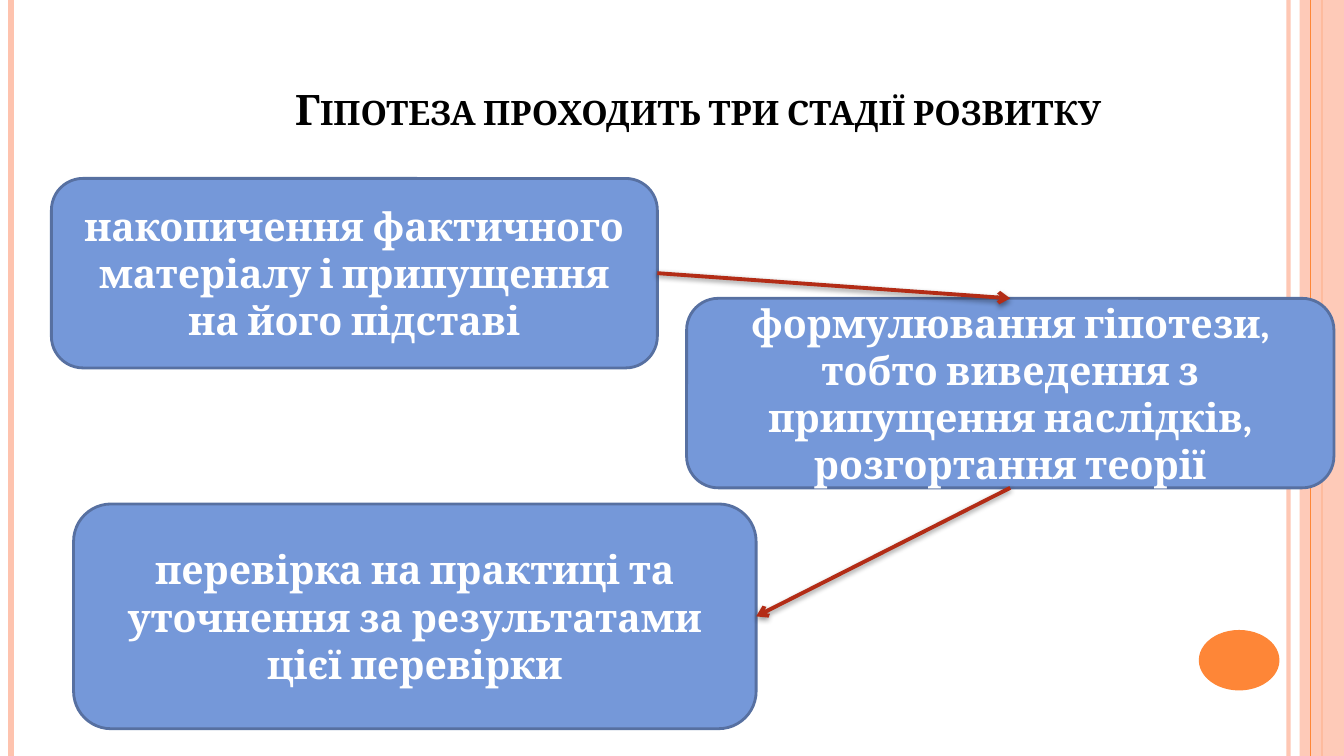
from lxml.etree import SubElement
from pptx import Presentation
from pptx.dml.color import RGBColor
from pptx.enum.shapes import MSO_CONNECTOR as Connector, MSO_SHAPE as Preset
from pptx.enum.text import MSO_ANCHOR as Anchor, MSO_AUTO_SIZE as AutoSize, PP_ALIGN as Align
from pptx.oxml.ns import qn
from pptx.util import Inches, Pt

WIDTH, HEIGHT = 13.33, 7.5
FONT = "Cambria"
PEACH, ORANGE, RED = "FEC3AE", "FE8637", "B32C16"
CARD_FILL, CARD_LINE = "7598D9", "5770A1"
TOP, BOTTOM, RIGHT = 0, 2, 3

TITLE = ("Гіпотеза проходить три стадії розвитку", (0.64, 0.32, 12.57, 1.06))
STAGES = [
    ("накопичення фактичного матеріалу і припущення на його підставі", (0.51, 1.77, 6.01, 1.88)),
    ("формулювання гіпотези, тобто виведення з припущення наслідків, розгортання теорії",
     (6.81, 2.96, 6.42, 1.88)),
    ("перевірка на практиці та уточнення за результатами цієї перевірки", (0.73, 5, 6.77, 2.23)),
]
ARROWS = [(0, RIGHT, 1, TOP), (1, BOTTOM, 2, RIGHT)]
BACK_STRIPES = [(12.78, PEACH, 3, 93), (0.11, PEACH, 4.5, 100), (13.11, ORANGE, 1.5, 100)]
FRONT_STRIPES = [(13, ORANGE, 0.75, 100)]
BAND = (12.89, 0, WIDTH - 12.89, HEIGHT)
DOT = (11.89, 6.25, 0.8, 0.6)


def color(value):
    return RGBColor.from_string(value)


def set_alpha(element, percent):
    if percent < 100:
        target = next(element.iter(qn("a:srgbClr")))
        SubElement(target, qn("a:alpha"), val=str(percent * 1000))


def add_shape(preset, box, fill, alpha=100):
    shape = slide.shapes.add_shape(preset, *map(Inches, box))
    shape.shadow.inherit = False
    shape.fill.solid()
    shape.fill.fore_color.rgb = color(fill)
    set_alpha(shape._element.spPr, alpha)
    shape.line.fill.background()
    return shape


def add_line(start, end, line_color, width, alpha=100):
    line = slide.shapes.add_connector(Connector.STRAIGHT, *map(Inches, start + end))
    line.line.color.rgb = color(line_color)
    line.line.width = Pt(width)
    set_alpha(line._element.spPr, alpha)
    SubElement(line._element.spPr, qn("a:effectLst"))
    return line


def add_stripes(stripes):
    for x, line_color, width, alpha in stripes:
        add_line((x, 0), (x, HEIGHT), line_color, width, alpha)


def write(shape, text, size, text_color, anchor):
    frame = shape.text_frame
    frame.text = text
    frame.word_wrap = True
    frame.auto_size = AutoSize.NONE
    frame.vertical_anchor = anchor
    paragraph = frame.paragraphs[0]
    paragraph.alignment = Align.CENTER
    font = paragraph.runs[0].font
    font.name, font.size, font.bold = FONT, Pt(size), True
    font.color.rgb = color(text_color)
    return paragraph.runs[0]


def add_stage(text, box):
    card = add_shape(Preset.ROUNDED_RECTANGLE, box, CARD_FILL)
    card.line.color.rgb = color(CARD_LINE)
    card.line.width = Pt(2)
    write(card, text, 28, "FFFFFF", Anchor.MIDDLE)
    return card


def add_arrow(source, source_side, target, target_side):
    arrow = add_line((0, 0), (1, 1), RED, 2.75)
    arrow.begin_connect(source, source_side)
    arrow.end_connect(target, target_side)
    properties = arrow._element.spPr
    SubElement(properties.find(qn("a:ln")), qn("a:tailEnd"), type="arrow")
    shadow = SubElement(properties.find(qn("a:effectLst")), qn("a:outerShdw"),
                        blurRad=str(Pt(4)), dist=str(Pt(1.6)), dir="5400000", rotWithShape="0")
    SubElement(shadow, qn("a:srgbClr"), val="000000")
    set_alpha(shadow, 42)


presentation = Presentation()
presentation.slide_width, presentation.slide_height = Inches(WIDTH), Inches(HEIGHT)
slide = presentation.slides.add_slide(presentation.slide_layouts[5])
slide.background.fill.solid()
slide.background.fill.fore_color.rgb = color("FFFFFF")

add_stripes(BACK_STRIPES)
add_shape(Preset.RECTANGLE, BAND, PEACH, 87)
add_stripes(FRONT_STRIPES)
add_shape(Preset.OVAL, DOT, ORANGE)

title = slide.shapes.title
title_text, title_box = TITLE
title.left, title.top, title.width, title.height = map(Inches, title_box)
title_run = write(title, title_text, 30, "000000", Anchor.BOTTOM)
title_run.font._element.set("cap", "small")

cards = [add_stage(text, box) for text, box in STAGES]
for source, source_side, target, target_side in ARROWS:
    add_arrow(cards[source], source_side, cards[target], target_side)

presentation.save("out.pptx")
